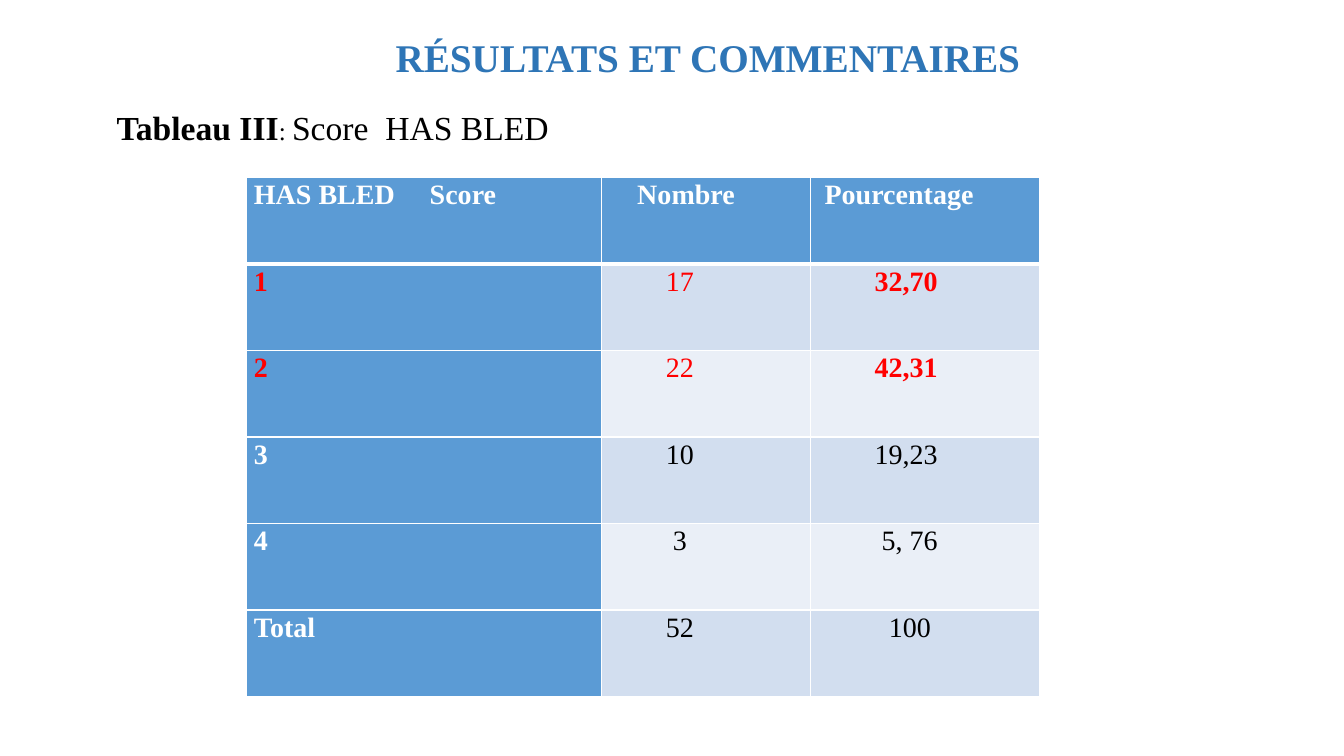
import pptx
import pptx.util
import pptx.dml.color
import pptx.enum.text
import pptx.oxml.ns
from lxml import etree

Cm, Pt = pptx.util.Cm, pptx.util.Pt

FONT = "Times New Roman"
COLORS = {
    "title": "2E75B6",
    "header": "5B9BD5",
    "band_dark": "D2DEEF",
    "band_light": "EAEFF7",
    "highlight": "FF0000",
    "white": "FFFFFF",
    "black": "000000",
}
TITLE = [("RÉSULTATS ET COMMENTAIRES", 28, True, "title")]
CAPTION = [
    ("Tableau III", 24, True, "black"),
    (": ", 18, False, "black"),
    ("Score\tHAS BLED", 24, False, "black"),
]
ROWS = [
    ("HAS BLED\tScore", "Nombre", "Pourcentage"),
    ("1", "17", "32,70"),
    ("2", "22", "42,31"),
    ("3", "10", "19,23"),
    ("4", "3", "5, 76"),
    ("Total", "52", "100"),
]
INDENTS = [(0, 4, 1), (0, 8, 8), (0, 8, 8), (0, 8, 8), (0, 9, 9), (0, 8, 10)]
HIGHLIGHTED_ROWS = (1, 2)
COLUMN_WIDTHS = (8.94, 5.26, 5.79)
ROW_HEIGHT = 2.18
INDENT_STEP = 0.18
CELL_MARGIN = 0.18
LINE_SPACING = 1.07


def add_runs(paragraph, runs):
    for text, size, bold, color in runs:
        run = paragraph.add_run()
        run.text = text
        run.font.name = FONT
        run.font.size = Pt(size)
        run.font.bold = bold
        run.font.color.rgb = pptx.dml.color.RGBColor.from_string(COLORS[color])


def add_tab_stop(paragraph, position):
    properties = paragraph._p.get_or_add_pPr()
    tabs = etree.SubElement(properties, pptx.oxml.ns.qn("a:tabLst"))
    etree.SubElement(tabs, pptx.oxml.ns.qn("a:tab"), pos=str(Cm(position)), algn="l")


def add_text(slide, left, top, width, height, runs):
    box = slide.shapes.add_textbox(Cm(left), Cm(top), Cm(width), Cm(height))
    box.text_frame.word_wrap = True
    box.text_frame.auto_size = pptx.enum.text.MSO_AUTO_SIZE.SHAPE_TO_FIT_TEXT
    paragraph = box.text_frame.paragraphs[0]
    add_runs(paragraph, runs)
    return paragraph


def set_borders(cell, widths):
    properties = cell._tc.get_or_add_tcPr()
    for side, width in widths.items():
        line = etree.SubElement(
            properties, pptx.oxml.ns.qn(f"a:ln{side}"), w=str(Pt(width))
        )
        fill = etree.SubElement(line, pptx.oxml.ns.qn("a:solidFill"))
        etree.SubElement(fill, pptx.oxml.ns.qn("a:srgbClr"), val=COLORS["white"])


def cell_style(row, column):
    if row == 0:
        return "header", "white", True
    highlighted = row in HIGHLIGHTED_ROWS
    if column == 0:
        return "header", "highlight" if highlighted else "white", True
    band = "band_dark" if row % 2 else "band_light"
    color = "highlight" if highlighted else "black"
    return band, color, highlighted and column == 2


def fill_cell(cell, row, column):
    band, color, bold = cell_style(row, column)
    cell.margin_left = Cm(CELL_MARGIN + INDENTS[row][column] * INDENT_STEP)
    cell.margin_right = Cm(CELL_MARGIN)
    cell.margin_top = cell.margin_bottom = 0
    top, bottom = (3 if row == 1 else 1), (3 if row == 0 else 1)
    set_borders(cell, {"L": 1, "R": 1, "T": top, "B": bottom})
    cell.fill.solid()
    cell.fill.fore_color.rgb = pptx.dml.color.RGBColor.from_string(COLORS[band])
    paragraph = cell.text_frame.paragraphs[0]
    paragraph.line_spacing = LINE_SPACING
    add_runs(paragraph, [(ROWS[row][column], 20, bold, color)])
    if "\t" in ROWS[row][column]:
        add_tab_stop(paragraph, 4.43)


def add_score_table(slide):
    table = slide.shapes.add_table(
        len(ROWS), len(COLUMN_WIDTHS), Cm(6.22), Cm(4.47),
        Cm(sum(COLUMN_WIDTHS)), Cm(ROW_HEIGHT * len(ROWS)),
    ).table
    for column, width in enumerate(COLUMN_WIDTHS):
        table.columns[column].width = Cm(width)
    for row in range(len(ROWS)):
        table.rows[row].height = Cm(ROW_HEIGHT)
        for column in range(len(COLUMN_WIDTHS)):
            fill_cell(table.cell(row, column), row, column)


def main():
    """Build the HAS BLED score slide."""
    presentation = pptx.Presentation()
    presentation.slide_width, presentation.slide_height = Cm(33.87), Cm(19.05)
    slide = presentation.slides.add_slide(presentation.slide_layouts[6])
    add_score_table(slide)
    title = add_text(slide, 5.49, 0.71, 24.69, 1.45, TITLE)
    title.alignment = pptx.enum.text.PP_ALIGN.CENTER
    caption = add_text(slide, 2.69, 2.51, 15.82, 1.3, CAPTION)
    caption.line_spacing = LINE_SPACING
    caption.space_after = Pt(8)
    add_tab_stop(caption, 6.77)
    presentation.save("out.pptx")


if __name__ == "__main__":
    main()
